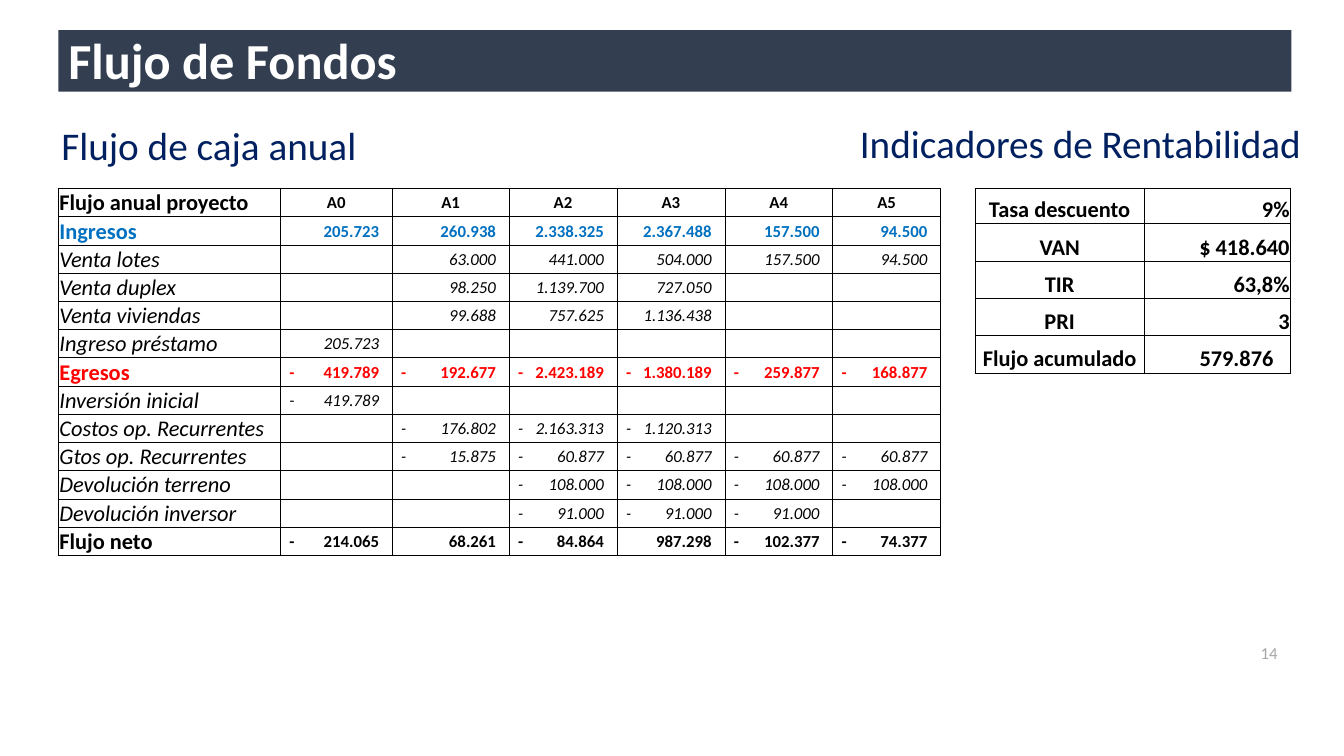
import pptx
import pptx.dml.color
import pptx.enum.shapes
import pptx.enum.text
import pptx.oxml.ns
import pptx.util
from lxml import etree

Inches = pptx.util.Inches
Pt = pptx.util.Pt
RGBColor = pptx.dml.color.RGBColor
ALIGN = pptx.enum.text.PP_ALIGN
ANCHOR = pptx.enum.text.MSO_ANCHOR
qn = pptx.oxml.ns.qn

WHITE = RGBColor(0xFF, 0xFF, 0xFF)
BLACK = RGBColor(0, 0, 0)
SLATE = RGBColor(0x33, 0x3F, 0x50)
NAVY = RGBColor(0x00, 0x20, 0x60)
BLUE = RGBColor(0x00, 0x70, 0xC0)
RED = RGBColor(0xFF, 0, 0)
GRAY = RGBColor(0xA6, 0xA6, 0xA6)

YEARS = ["A0", "A1", "A2", "A3", "A4", "A5"]
TOTAL_COLORS = {"Ingresos": BLUE, "Egresos": RED, "Flujo neto": BLACK}
CASH_FLOW = [
    ("Ingresos", ["205.723", "260.938", "2.338.325", "2.367.488", "157.500", "94.500"]),
    ("Venta lotes", ["", "63.000", "441.000", "504.000", "157.500", "94.500"]),
    ("Venta duplex", ["", "98.250", "1.139.700", "727.050", "", ""]),
    ("Venta viviendas", ["", "99.688", "757.625", "1.136.438", "", ""]),
    ("Ingreso préstamo", ["205.723", "", "", "", "", ""]),
    ("Egresos", ["-419.789", "-192.677", "-2.423.189", "-1.380.189", "-259.877", "-168.877"]),
    ("Inversión inicial", ["-419.789", "", "", "", "", ""]),
    ("Costos op. Recurrentes", ["", "-176.802", "-2.163.313", "-1.120.313", "", ""]),
    ("Gtos op. Recurrentes", ["", "-15.875", "-60.877", "-60.877", "-60.877", "-60.877"]),
    ("Devolución terreno", ["", "", "-108.000", "-108.000", "-108.000", "-108.000"]),
    ("Devolución inversor", ["", "", "-91.000", "-91.000", "-91.000", ""]),
    ("Flujo neto", ["-214.065", "68.261", "-84.864", "987.298", "-102.377", "-74.377"]),
]
INDICATORS = [
    ("Tasa descuento", "9%"),
    ("VAN", "$ 418.640"),
    ("TIR", "63,8%"),
    ("PRI", "3"),
    ("Flujo acumulado", "579.876"),
]


class SlideBuilder:
    font = "Calibri"
    cell_inset = 0.01
    dash_inset = 0.09
    amount_inset = 0.13

    def __init__(self, slide):
        self.shapes = slide.shapes

    def add_words(self, frame, text, size, color, bold=False, italic=False,
                  align=ALIGN.LEFT, spacing=None):
        paragraph = frame.paragraphs[0]
        paragraph.alignment = align
        if spacing:
            paragraph.line_spacing = spacing
        run = paragraph.add_run()
        run.text = text
        run.font.name = self.font
        run.font.size = Pt(size)
        run.font.bold = bold
        run.font.italic = italic
        run.font.color.rgb = color
        return paragraph

    def box(self, left, top, width, height, fill, line=None):
        box = self.shapes.add_shape(
            pptx.enum.shapes.MSO_SHAPE.RECTANGLE,
            Inches(left), Inches(top), Inches(width), Inches(height))
        box.shadow.inherit = False
        box.fill.solid()
        box.fill.fore_color.rgb = fill
        if line is None:
            box.line.fill.background()
        else:
            box.line.color.rgb = line
            box.line.width = Pt(0.75)
        return box

    def heading(self, left, top, width, text):
        frame = self.box(left, top, width, 0.51, WHITE, WHITE).text_frame
        frame.word_wrap = True
        frame.vertical_anchor = ANCHOR.MIDDLE
        self.add_words(frame, text, 28, NAVY, spacing=0.9)

    def text(self, left, top, width, height, text, size, color, **style):
        frame = self.shapes.add_textbox(
            Inches(left), Inches(top), Inches(width), Inches(height)).text_frame
        frame.word_wrap = True
        frame.vertical_anchor = ANCHOR.MIDDLE
        self.add_words(frame, text, size, color, **style)

    def table(self, left, top, widths, heights):
        table = self.shapes.add_table(
            len(heights), len(widths), Inches(left), Inches(top),
            Inches(sum(widths)), Inches(sum(heights))).table
        table.first_row = table.horz_banding = False
        for column, width in zip(table.columns, widths):
            column.width = Inches(width)
        for row, height in zip(table.rows, heights):
            row.height = Inches(height)
        for cell in table.iter_cells():
            self.outline(cell)
            cell.fill.background()
            cell.margin_left = cell.margin_right = Inches(self.cell_inset)
            cell.margin_top, cell.margin_bottom = Inches(self.cell_inset), 0
        return table

    def outline(self, cell):
        properties = cell._tc.get_or_add_tcPr()
        for side in ("a:lnL", "a:lnR", "a:lnT", "a:lnB"):
            line = etree.SubElement(properties, qn(side), w=str(Pt(0.5)))
            fill = etree.SubElement(line, qn("a:solidFill"))
            etree.SubElement(fill, qn("a:srgbClr"), val=str(BLACK))

    def cell(self, cell, text, size, color=BLACK, anchor=ANCHOR.BOTTOM, **style):
        cell.vertical_anchor = anchor
        return self.add_words(cell.text_frame, text, size, color, **style)

    def amount(self, cell, value, width, **style):
        """Put the minus sign at the left edge and the figure at the right."""
        if not value:
            paragraph = cell.text_frame.paragraphs[0]._p
            etree.SubElement(paragraph, qn("a:endParaRPr"), sz="1200")
        elif value.startswith("-"):
            cell.margin_left = Inches(self.dash_inset)
            paragraph = self.cell(cell, "-\t" + value[1:], 12, anchor=ANCHOR.MIDDLE, **style)
            stops = etree.SubElement(paragraph._p.get_or_add_pPr(), qn("a:tabLst"))
            stop = Inches(width - self.dash_inset - self.amount_inset)
            etree.SubElement(stops, qn("a:tab"), pos=str(stop), algn="r")
        else:
            cell.margin_right = Inches(self.amount_inset)
            self.cell(cell, value, 12, anchor=ANCHOR.MIDDLE, align=ALIGN.RIGHT, **style)

    def cash_flow(self, left, top):
        widths = [2.2, 1.11, 1.16] + [1.07] * 4
        table = self.table(left, top, widths, [0.28] * (len(CASH_FLOW) + 1))
        self.cell(table.cell(0, 0), "Flujo anual proyecto", 16, bold=True)
        for column, year in enumerate(YEARS, 1):
            self.cell(table.cell(0, column), year, 12, anchor=ANCHOR.MIDDLE,
                      bold=True, align=ALIGN.CENTER)
        for row, (concept, amounts) in enumerate(CASH_FLOW, 1):
            total = concept in TOTAL_COLORS
            style = dict(color=TOTAL_COLORS.get(concept, BLACK), bold=total, italic=not total)
            self.cell(table.cell(row, 0), concept, 16, **style)
            for column, value in enumerate(amounts, 1):
                self.amount(table.cell(row, column), value, widths[column], **style)

    def indicators(self, left, top):
        table = self.table(left, top, [1.68, 1.45], [0.35] + [0.37] * 4)
        for row, (indicator, value) in enumerate(INDICATORS):
            self.cell(table.cell(row, 0), indicator, 16, bold=True, align=ALIGN.CENTER)
            self.cell(table.cell(row, 1), value, 16, bold=True, align=ALIGN.RIGHT)
        accumulated = len(INDICATORS) - 1
        table.cell(accumulated, 1).margin_right = Inches(0.17)
        for column in range(2):
            fill = table.cell(accumulated, column).fill
            fill.solid()
            fill.fore_color.rgb = WHITE


def main():
    deck = pptx.Presentation()
    deck.slide_width, deck.slide_height = Inches(13.33), Inches(7.5)
    builder = SlideBuilder(deck.slides.add_slide(deck.slide_layouts[6]))
    builder.box(0.58, 0.3, 12.23, 0.61, SLATE)
    builder.text(0.58, 0.24, 9.09, 0.77, "Flujo de Fondos", 36, WHITE, bold=True, spacing=0.9)
    builder.cash_flow(0.58, 1.87)
    builder.indicators(9.67, 1.87)
    builder.heading(0.51, 1.21, 6.16, "Flujo de caja anual")
    builder.heading(8.43, 1.19, 4.91, "Indicadores de Rentabilidad")
    builder.text(12.27, 6.19, 0.5, 0.57, "14", 12, GRAY, align=ALIGN.RIGHT)
    deck.save("out.pptx")


if __name__ == "__main__":
    main()
